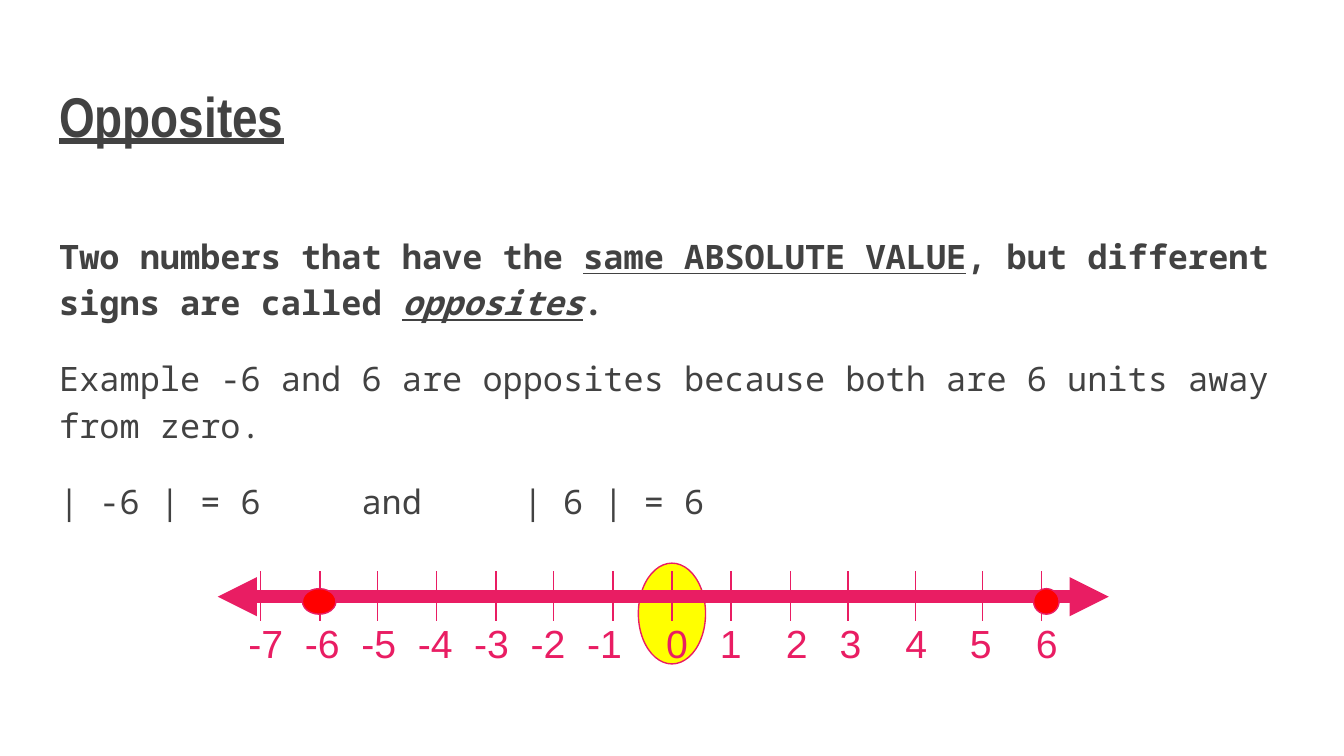
from lxml import etree
from pptx import Presentation
from pptx.dml.color import RGBColor
from pptx.enum import shapes, text
from pptx.oxml.ns import qn
from pptx.util import Inches, Pt

PINK, GREY = "E91D63", "424242"


def paint(color_format, value):
    color_format.rgb = RGBColor.from_string(value)


prs = Presentation()
prs.slide_width, prs.slide_height = Inches(10), Inches(10) * 9 // 16
s = prs.slides.add_slide(prs.slide_layouts[1])

title, body = s.shapes.title, s.placeholders[1]
for sp, top, height in ((title, 0.41, 0.8), (body, 1.61, 3.39)):
    sp.left, sp.top = Inches(0.34), Inches(top)
    sp.width, sp.height = Inches(9.32), Inches(height)
    tf = sp.text_frame
    tf.auto_size = text.MSO_AUTO_SIZE.NONE
    tf.margin_left = tf.margin_right = tf.margin_top = tf.margin_bottom = Inches(0.1)

tf = title.text_frame
tf.text = "Opposites"
tf.vertical_anchor = text.MSO_ANCHOR.BOTTOM
p = tf.paragraphs[0]
p.alignment = text.PP_ALIGN.LEFT
font = p.runs[0].font
font.name, font.size, font.bold, font.underline = "Arial Narrow", Pt(30), True, True
paint(font.color, GREY)

paragraphs = [
    ["Two numbers that have the ", "same ABSOLUTE VALUE",
     ", but different signs are called ", "opposites", "."],
    ["Example -6 and 6 are opposites because both are 6 units away from zero."],
    ["| -6 | = 6", " ", "and", " ", "| 6 | = 6"],
]
tf = body.text_frame
tf.vertical_anchor = text.MSO_ANCHOR.TOP
for i, parts in enumerate(paragraphs):
    p = tf.paragraphs[0] if i == 0 else tf.add_paragraph()
    p.line_spacing, p.space_before, p.space_after = 1.15, Pt(0), Pt(16)
    pPr = p._p.get_or_add_pPr()
    pPr.set("marL", "0")
    pPr.set("indent", "0")
    etree.SubElement(pPr, qn("a:buNone"))
    for part in parts:
        r = p.add_run()
        r.text = part
        r.font.name, r.font.size, r.font.bold = "Noto Sans Mono", Pt(18), i == 0
        r.font.underline = part in ("same ABSOLUTE VALUE", "opposites")
        r.font.italic = part == "opposites"
        paint(r.font.color, GREY)
        if part == " ":
            r._r.get_or_add_rPr().set("spc", "4320")

ticks = [1.94, 2.38, 2.81, 3.25, 3.69, 4.12, 4.56, 5, 5.44, 5.88, 6.31, 6.81, 7.31, 7.75]
lines = [(1.62, 4.44, 8.25, 4.44, 7)] + [(x, 4.25, x, 4.62, 0.75) for x in ticks]
ovals = [(4.75, 4.19, 0.5, 0.75, "FFFF00"),
         (2.25, 4.38, 0.25, 0.19, "FF0000"),
         (7.69, 4.38, 0.19, 0.19, "FF0000")]

for i, (x, y, w, h, fill) in enumerate(ovals):
    sp = s.shapes.add_shape(shapes.MSO_SHAPE.OVAL, Inches(x), Inches(y), Inches(w), Inches(h))
    sp.shadow.inherit = False
    sp.fill.solid()
    paint(sp.fill.fore_color, fill)
    paint(sp.line.color, PINK)
    sp.line.width = Pt(0.75)
    if i > 0:
        continue
    s.shapes._spTree.insert(2, sp._element)

    number_line = s.shapes.add_group_shape()
    for x1, y1, x2, y2, width in lines:
        cx = number_line.shapes.add_connector(
            shapes.MSO_CONNECTOR.STRAIGHT, Inches(x1), Inches(y1), Inches(x2), Inches(y2))
        paint(cx.line.color, PINK)
        cx.line.width = Pt(width)
        if width == 7:
            for end in ("a:headEnd", "a:tailEnd"):
                etree.SubElement(cx.line._get_or_add_ln(), qn(end), type="triangle")
        etree.SubElement(cx._element.spPr, qn("a:effectLst"))

    labels = number_line.shapes.add_textbox(Inches(1.75), Inches(4.56), Inches(6.44), Inches(0.45))
    tf = labels.text_frame
    tf.word_wrap = True
    tf.text = "\t".join(str(n) for n in range(-7, 7))
    p = tf.paragraphs[0]
    centres = [2.4, 2.82, 3.24, 3.66, 4.08, 4.5, 5.04, 5.44, 5.93, 6.33, 6.82, 7.3, 7.79]
    tabs = etree.SubElement(p._p.get_or_add_pPr(), qn("a:tabLst"))
    for x in centres:
        etree.SubElement(tabs, qn("a:tab"), pos=str(Inches(x - 1.85)), algn="ctr")
    for r in p.runs:
        r.font.name, r.font.size = "Arial", Pt(21)
        paint(r.font.color, PINK)

prs.save("out.pptx")
